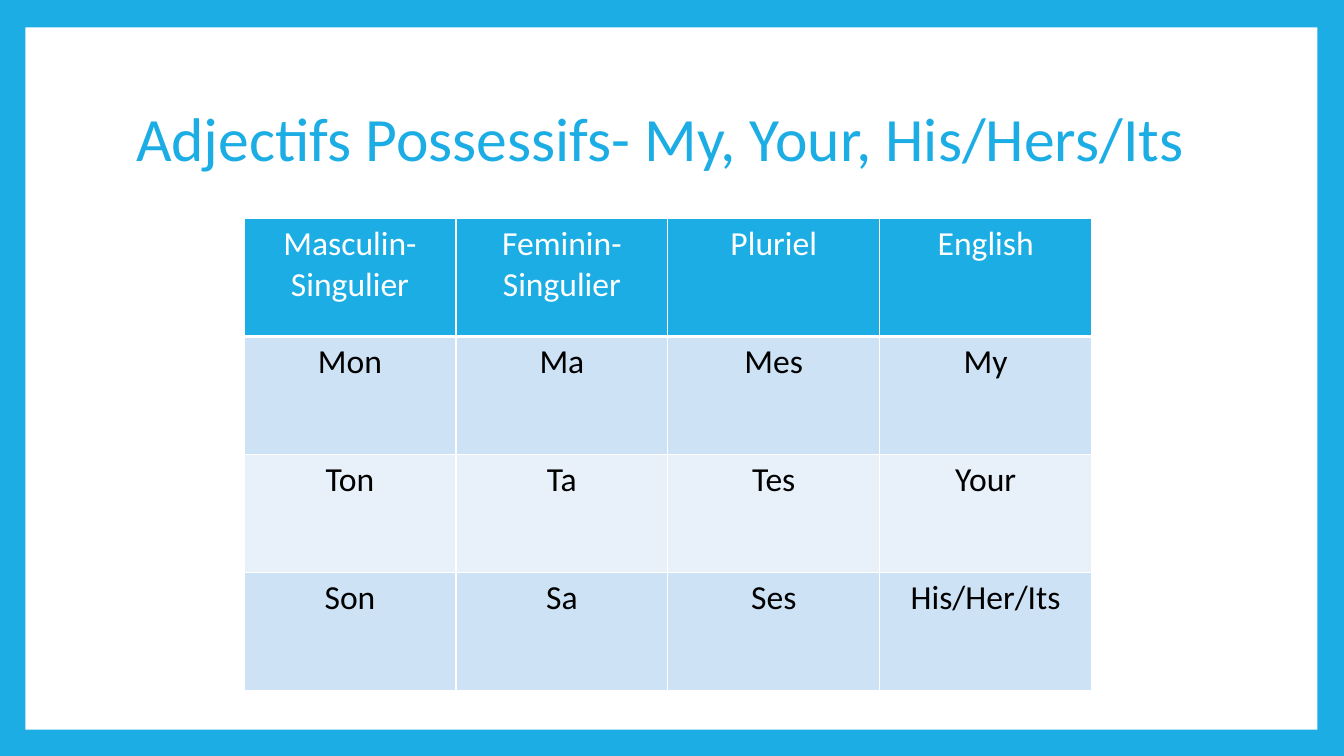
from lxml import etree
from pptx import Presentation
from pptx import util as u
from pptx.dml.color import RGBColor
from pptx.enum import shapes, text
from pptx.oxml.ns import qn

BLUE = RGBColor(0x1C, 0xAD, 0xE4)
WHITE = RGBColor(0xFF, 0xFF, 0xFF)
BLACK = RGBColor(0, 0, 0)
BAND = RGBColor(0xCD, 0xE3, 0xF5)
PALE = RGBColor(0xE8, 0xF1, 0xFA)
FONT = "Calibri"

WORDS = [
    ["Masculin- Singulier", "Feminin-Singulier", "Pluriel", "English"],
    ["Mon", "Ma", "Mes", "My"],
    ["Ton", "Ta", "Tes", "Your"],
    ["Son", "Sa", "Ses", "His/Her/Its"],
]


def write(frame, words, size, color, align):
    frame.text = words
    para = frame.paragraphs[0]
    para.alignment = align
    font = para.runs[0].font
    font.name, font.size, font.bold = FONT, u.Pt(size), False
    font.color.rgb = color
    return para


def add_panel(slide):
    panel = slide.shapes.add_shape(
        shapes.MSO_SHAPE.RECTANGLE, u.Cm(0.64), u.Cm(0.69), u.Cm(32.56), u.Cm(17.7))
    panel.shadow.inherit = False
    panel.fill.solid()
    panel.fill.fore_color.rgb = WHITE
    panel.line.fill.background()


def add_title(slide, words):
    box = slide.shapes.add_textbox(u.Cm(3.18), u.Cm(1.7), u.Cm(27.43), u.Cm(3.76))
    frame = box.text_frame
    frame.word_wrap = True
    frame.vertical_anchor = text.MSO_ANCHOR.MIDDLE
    para = write(frame, words, 44, BLUE, text.PP_ALIGN.LEFT)
    para.line_spacing = 0.9


def set_edge(cell, side, width):
    props = cell._tc.get_or_add_tcPr()
    line = etree.SubElement(props, qn(f"a:ln{side}"), w=str(u.Pt(width)))
    fill = etree.SubElement(line, qn("a:solidFill"))
    etree.SubElement(fill, qn("a:srgbClr"), val=str(WHITE))


def add_grid(slide, rows):
    count, wide = len(rows), len(rows[0])
    col, row = u.Cm(5.34), u.Cm(2.97)
    grid = slide.shapes.add_table(
        count, wide, u.Cm(6.15), u.Cm(5.51), col * wide, row * count).table
    for r, line in enumerate(rows):
        head = r == 0
        shade = BLUE if head else (BAND if r % 2 else PALE)
        for c, word in enumerate(line):
            cell = grid.cell(r, c)
            # Borders come before the fill; the rule under the header is thicker
            for side in "LRTB":
                thick = (head and side == "B") or (r == 1 and side == "T")
                set_edge(cell, side, 3 if thick else 1)
            cell.fill.solid()
            cell.fill.fore_color.rgb = shade
            write(cell.text_frame, word, 24, WHITE if head else BLACK,
                  text.PP_ALIGN.CENTER)


def main():
    deck = Presentation()
    deck.slide_width, deck.slide_height = u.Cm(33.87), u.Cm(19.05)
    slide = deck.slides.add_slide(deck.slide_layouts[6])

    # Blue frame around a white panel
    slide.background.fill.solid()
    slide.background.fill.fore_color.rgb = BLUE
    add_panel(slide)

    # Title and table of possessives
    add_title(slide, "Adjectifs Possessifs- My, Your, His/Hers/Its")
    add_grid(slide, WORDS)
    deck.save("out.pptx")


if __name__ == "__main__":
    main()
